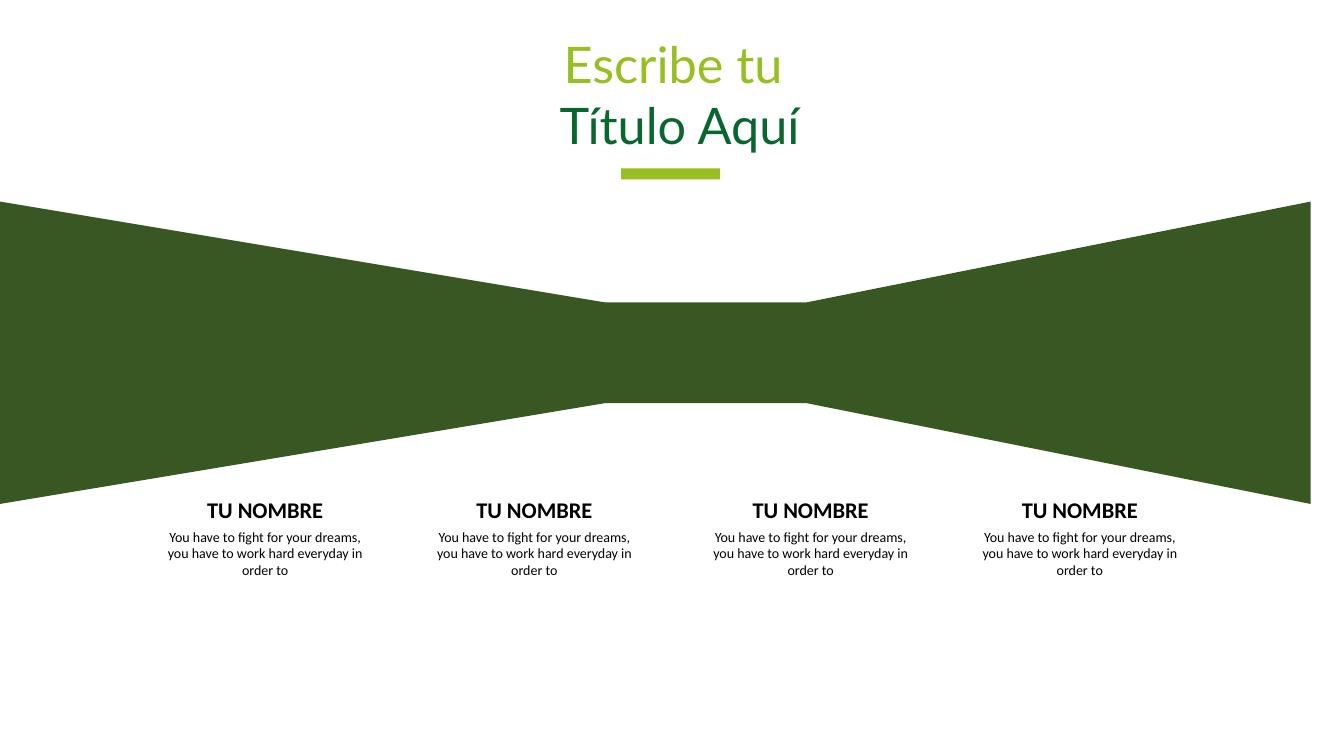
from pptx import Presentation
from pptx.dml import color
from pptx.enum import shapes, text
from pptx.util import Inches, Pt

LIME = "97BF1F"
GREEN = "08672F"
FOREST = "385723"
BLACK = "000000"
CARD_TEXT = "You have to fight for your dreams, you have to work hard everyday in order to"


def rgb(value):
    """Turn a hex string into a colour."""
    return color.RGBColor.from_string(value)


def fill_plain(shape, value):
    """Fill a shape with one colour, without outline or shadow."""
    shape.fill.solid()
    shape.fill.fore_color.rgb = rgb(value)
    shape.line.fill.background()
    shape.shadow.inherit = False


def format_paragraph(paragraph, font_name, size, value, bold=False):
    """Centre a paragraph and set its font."""
    paragraph.alignment = text.PP_ALIGN.CENTER
    paragraph.font.name = font_name
    paragraph.font.size = Pt(size)
    paragraph.font.bold = bold
    paragraph.font.color.rgb = rgb(value)


def curve_points(start, first, second, end, steps=32):
    """Return points along a cubic curve, both ends included."""
    points = []
    for step in range(steps + 1):
        t = step / steps
        weights = ((1 - t) ** 3, 3 * t * (1 - t) ** 2, 3 * t ** 2 * (1 - t), t ** 3)
        points.append(tuple(
            sum(weight * value for weight, value in zip(weights, values))
            for values in zip(start, first, second, end)))
    return points


def add_band(slide, left, top, width, height):
    """Draw the band that narrows to a waist in the middle."""
    right, bottom, center = left + width, top + height, left + width / 2
    upper = curve_points((center + 0.95, top + 1.5), (center + 0.32, top + 1.67),
                         (center - 0.32, top + 1.67), (center - 0.95, top + 1.5))
    lower = curve_points((center - 1.06, bottom - 1.05), (center - 0.36, bottom - 1.18),
                         (center + 0.36, bottom - 1.18), (center + 1.06, bottom - 1.05))
    outline = upper + [(left, top), (left, bottom)] + lower + [(right, bottom), (right, top)]
    builder = slide.shapes.build_freeform(*outline[0], scale=Inches(1))
    builder.add_line_segments(outline[1:], close=True)
    fill_plain(builder.convert_to_shape(), FOREST)


def add_heading(slide, left, top, width, height):
    """Place the two-line title and the bar below it."""
    title = slide.shapes.title
    title.left, title.top = Inches(left), Inches(top)
    title.width, title.height = Inches(width), Inches(height)
    frame = title.text_frame
    frame.text = "Escribe tu \nTítulo Aquí"
    frame.word_wrap = True
    frame.auto_size = text.MSO_AUTO_SIZE.NONE
    frame.vertical_anchor = text.MSO_ANCHOR.TOP
    for paragraph, value in zip(frame.paragraphs, (LIME, GREEN)):
        format_paragraph(paragraph, "Lato", 36, value)
    bar = slide.shapes.add_shape(
        shapes.MSO_SHAPE.RECTANGLE, Inches(left + width / 2 - 0.58),
        Inches(top + height + 0.08), Inches(0.98), Inches(0.11))
    fill_plain(bar, LIME)


def add_text(slide, left, top, width, height, content, size, bold):
    """Add a wrapped text box with one centred paragraph."""
    box = slide.shapes.add_textbox(Inches(left), Inches(top), Inches(width), Inches(height))
    box.text_frame.word_wrap = True
    box.text_frame.text = content
    format_paragraph(box.text_frame.paragraphs[0], "Calibri", size, BLACK, bold)


def add_card(slide, left, top, width, height):
    """Add a name with its description below."""
    add_text(slide, left, top, width, 0.37, "TU NOMBRE", 16, True)
    add_text(slide, left, top + 0.32, width, height - 0.32, CARD_TEXT, 10, False)


def main():
    """Build and save the presentation."""
    presentation = Presentation()
    presentation.slide_width, presentation.slide_height = Inches(13.33), Inches(7.5)
    slide = presentation.slides.add_slide(presentation.slide_layouts[5])
    add_band(slide, -0.01, 1.85, 13.36, 3.12)
    add_heading(slide, 3.97, 0.28, 5.54, 1.31)
    for index in range(4):
        pair, member = divmod(index, 2)
        add_card(slide, 1.48 + 5.41 * pair + 2.67 * member, 4.87, 2.3, 0.93)
    presentation.save("out.pptx")


if __name__ == "__main__":
    main()
